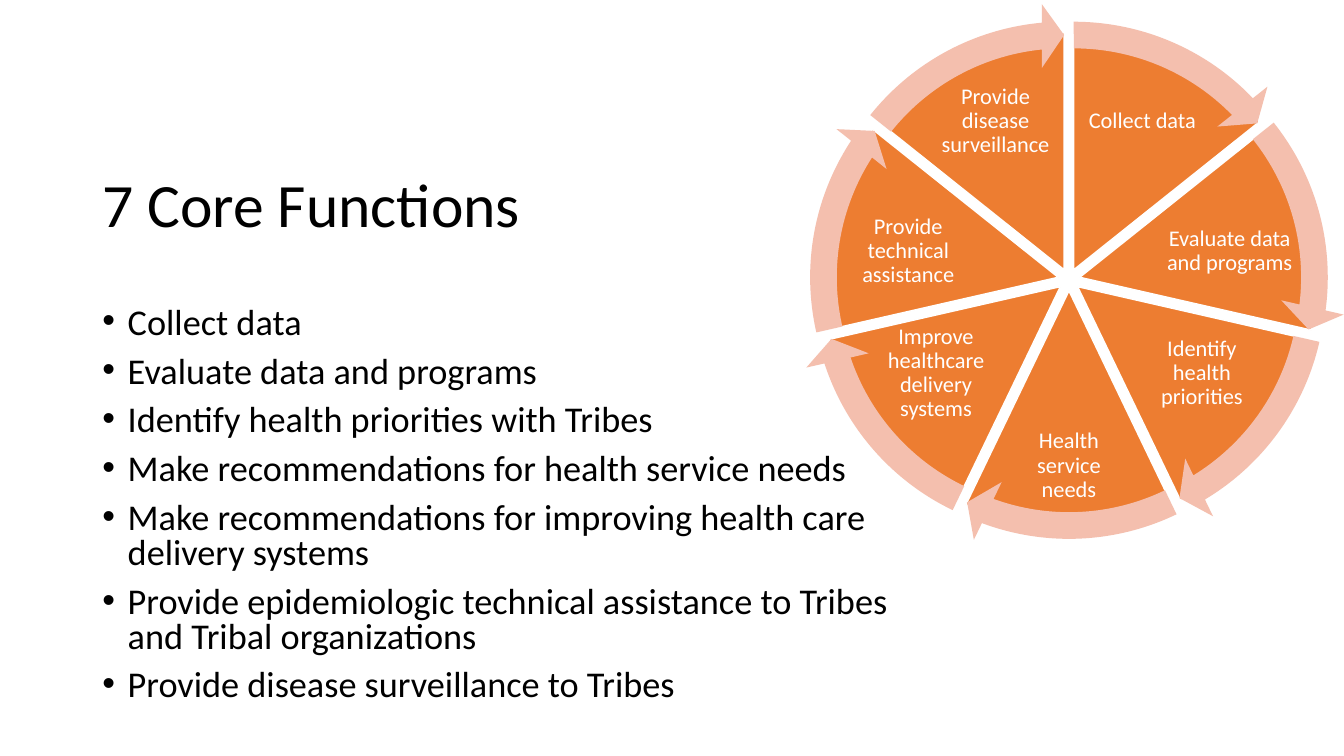
from dataclasses import dataclass
from math import cos, radians, sin

from lxml.etree import SubElement
from pptx import Presentation
from pptx.dml.color import RGBColor
from pptx.enum.shapes import MSO_SHAPE
from pptx.enum.text import MSO_ANCHOR, PP_ALIGN
from pptx.oxml.ns import qn
from pptx.util import Cm, Pt


@dataclass(frozen=True)
class Theme:
    font: str = "Calibri"
    ink: RGBColor = RGBColor(0x00, 0x00, 0x00)
    white: RGBColor = RGBColor(0xFF, 0xFF, 0xFF)
    slice: RGBColor = RGBColor(0xED, 0x7D, 0x31)
    arrow: RGBColor = RGBColor(0xF4, 0xBF, 0xAE)
    title_size: float = 44
    body_size: float = 25.9
    label_size: float = 16


THEME = Theme()

TITLE = "7 Core Functions"
FUNCTIONS = [
    "Collect data",
    "Evaluate data and programs",
    "Identify health priorities with Tribes",
    "Make recommendations for health service needs",
    "Make recommendations for improving health care delivery systems",
    "Provide epidemiologic technical assistance to Tribes and Tribal organizations",
    "Provide disease surveillance to Tribes",
]
SLICE_LABELS = [
    "Collect data",
    "Evaluate data and programs",
    "Identify health priorities",
    "Health service needs",
    "Improve healthcare delivery systems",
    "Provide technical assistance",
    "Provide disease surveillance",
]
# Label centre from the hub, then width and height, in cm; the left half mirrors the right
LABEL_SPOTS = [
    (1.85, -4.0, 2.84, 2.29),
    (4.05, -0.72, 3.28, 1.98),
    (3.35, 2.36, 2.84, 2.21),
    (0, 4.69, 2.77, 1.98),
]
ANGLE_UNIT = 0.6  # preset-shape adjustment per degree


def add_text_box(shapes, box, anchor=MSO_ANCHOR.TOP, inset=None):
    frame = shapes.add_textbox(*(Cm(length) for length in box)).text_frame
    frame.word_wrap = True
    frame.vertical_anchor = anchor
    if inset is not None:
        frame.margin_left = frame.margin_right = Cm(inset)
        frame.margin_top = frame.margin_bottom = Cm(inset)
    return frame


def write(para, text, size, color, spacing):
    para.line_spacing = spacing
    span = para.add_run()
    span.text = text
    span.font.name = THEME.font
    span.font.size = Pt(size)
    span.font.color.rgb = color


def add_bullet(para):
    properties = para._p.get_or_add_pPr()
    properties.set("marL", str(Cm(0.64)))
    properties.set("indent", str(Cm(-0.64)))
    SubElement(properties, qn("a:buFont")).set("typeface", "Arial")
    SubElement(properties, qn("a:buChar")).set("char", "•")


def add_title(page, box):
    frame = add_text_box(page.shapes, box, MSO_ANCHOR.MIDDLE)
    write(frame.paragraphs[0], TITLE, THEME.title_size, THEME.ink, 0.9)


def add_function_list(page, box):
    frame = add_text_box(page.shapes, box)
    for index, text in enumerate(FUNCTIONS):
        para = frame.add_paragraph() if index else frame.paragraphs[0]
        add_bullet(para)
        para.space_before = Pt(10 if index else 0)
        write(para, text, THEME.body_size, THEME.ink, 0.8)


def add_disc(shapes, preset, center, diameter, color, adjustments):
    left, top = (middle - diameter / 2 for middle in center)
    disc = shapes.add_shape(preset, Cm(left), Cm(top), Cm(diameter), Cm(diameter))
    for index, value in enumerate(adjustments):
        disc.adjustments[index] = value
    disc.shadow.inherit = False
    disc.fill.solid()
    disc.fill.fore_color.rgb = color
    disc.line.fill.background()
    return disc


def add_slice_label(shapes, hub, index):
    last = len(SLICE_LABELS) - 1
    across, down, width, height = LABEL_SPOTS[min(index, last - index)]
    if index > last / 2:
        across = -across
    box = (hub[0] + across - width / 2, hub[1] + down - height / 2, width, height)
    frame = add_text_box(shapes, box, MSO_ANCHOR.MIDDLE, inset=0.05)
    para = frame.paragraphs[0]
    para.alignment = PP_ALIGN.CENTER
    write(para, SLICE_LABELS[index], THEME.label_size, THEME.white, 0.9)


def add_wheel(page, box):
    left, top, side = box
    hub = (left + side / 2, top + side / 2)
    offset = 0.02 * side
    arrow_diameter = 0.96 * side
    slice_diameter = 0.854 * side
    step = 360 / len(SLICE_LABELS)
    shapes = page.shapes.add_group_shape().shapes

    # Each sector is pushed outwards along its own middle angle
    sectors = []
    for index in range(len(SLICE_LABELS)):
        start = 270 + index * step
        middle = radians(start + step / 2)
        center = (hub[0] + offset * cos(middle), hub[1] + offset * sin(middle))
        sectors.append((center, start % 360, (start + step) % 360))

    # Slices with their labels
    for index, (center, start, end) in enumerate(sectors):
        pie = add_disc(shapes, MSO_SHAPE.PIE, center, slice_diameter, THEME.slice,
                       (start * ANGLE_UNIT, end * ANGLE_UNIT))
        pie.line.color.rgb = THEME.white
        pie.line.width = Pt(1)
        add_slice_label(shapes, hub, index)

    # Rim arrows, each ending one arrowhead short of the next slice
    head = 3.28
    for center, start, end in sectors:
        add_disc(shapes, MSO_SHAPE.CIRCULAR_ARROW, center, arrow_diameter, THEME.arrow,
                 (0.05, head, end * ANGLE_UNIT - head, start * ANGLE_UNIT, 0.06))


def main():
    deck = Presentation()
    deck.slide_width, deck.slide_height = Cm(33.87), Cm(19.05)
    page = deck.slides.add_slide(deck.slide_layouts[6])
    add_title(page, (2.33, 3.39, 29.21, 3.68))
    add_function_list(page, (2.33, 7.62, 21.43, 11.18))
    add_wheel(page, (19.94, 0.05, 14))
    deck.save("out.pptx")


if __name__ == "__main__":
    main()
